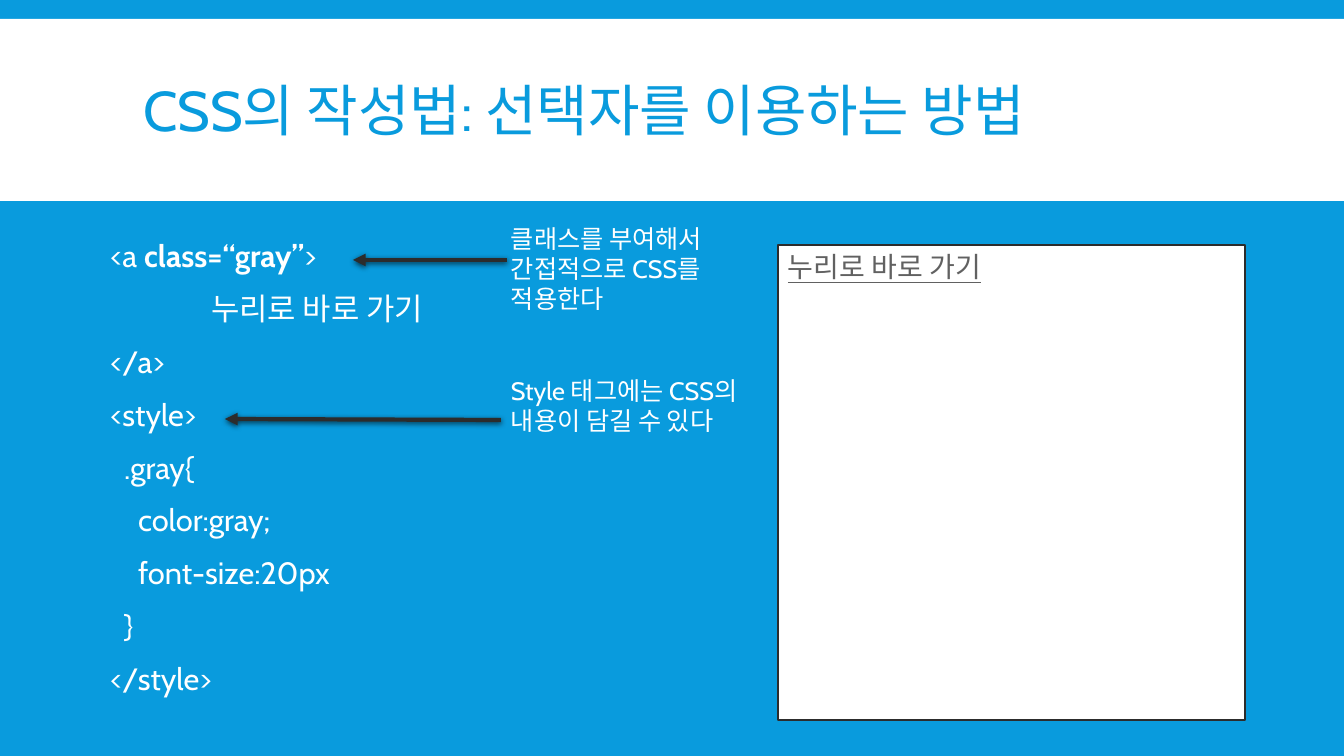
from dataclasses import dataclass

from pptx import Presentation
from pptx.dml.color import RGBColor
from pptx.enum.shapes import MSO_CONNECTOR, MSO_SHAPE
from pptx.enum.text import MSO_ANCHOR, MSO_AUTO_SIZE, PP_ALIGN
from pptx.oxml import parse_xml
from pptx.oxml.ns import nsdecls
from pptx.util import Pt

PX = 914400 / 100.8


@dataclass(frozen=True)
class Theme:
    font: str = "Cabin"
    blue: str = "099BDD"
    white: str = "FFFFFF"
    dark: str = "2C2C2C"
    gray: str = "616161"
    title: int = 40
    code: int = 22
    result: int = 20
    note: int = 18


THEME = Theme()

# Each code line: indent in px, then (text, bold) runs
CODE = [
    (0, [("<a ", False), ("class=“gray”", True), (">", False)]),
    (101, [("누리로 바로 가기", False)]),
    (0, [("</a>", False)]),
    (0, [("<style>", False)]),
    (14, [(".gray{", False)]),
    (28, [("color:gray;", False)]),
    (28, [("font-size:20px", False)]),
    (14, [("}", False)]),
    (0, [("</style>", False)]),
]

# Each note: text, top, arrow start and arrow end
NOTES = [
    ("클래스를 부여해서 간접적으로 CSS를 적용한다", 218, (507, 260), (353, 260)),
    ("Style 태그에는 CSS의 내용이 담길 수 있다", 370, (501, 420), (225, 419)),
]


def px(*values):
    return [round(v * PX) for v in values]


def rgb(color):
    return RGBColor.from_string(color)


def place(sp, *box):
    sp.left, sp.top, sp.width, sp.height = px(*box)


def format_run(r, size, color, bold=False, underline=False):
    r.font.name = THEME.font
    r.font.size = Pt(size)
    r.font.color.rgb = rgb(color)
    r.font.bold = bold
    r.font.underline = underline


def add_box(slide, box, line=None):
    sp = slide.shapes.add_shape(MSO_SHAPE.RECTANGLE, *px(*box))
    sp.shadow.inherit = False
    sp.fill.solid()
    sp.fill.fore_color.rgb = rgb(THEME.white)
    if line:
        sp.line.color.rgb = rgb(line)
        sp.line.width = Pt(1)
    else:
        sp.line.fill.background()
    return sp


def add_title(slide, text):
    sp = slide.shapes.title
    place(sp, 133, 31, 1079, 166)
    tf = sp.text_frame
    tf.text = text
    tf.vertical_anchor = MSO_ANCHOR.MIDDLE
    tf.auto_size = MSO_AUTO_SIZE.NONE
    p = tf.paragraphs[0]
    p.alignment = PP_ALIGN.LEFT
    p.line_spacing = 0.85
    format_run(p.runs[0], THEME.title, THEME.blue)


def add_code(slide, lines):
    sp = slide.placeholders[1]
    place(sp, 100, 236, 374, 505)
    tf = sp.text_frame
    tf.auto_size = MSO_AUTO_SIZE.NONE
    for i, (indent, runs) in enumerate(lines):
        p = tf.add_paragraph() if i else tf.paragraphs[0]
        p.line_spacing = 0.9
        p.space_before, p.space_after = Pt(12), Pt(2)
        pPr = p._p.get_or_add_pPr()
        pPr.set("marL", str(px(indent)[0]))
        pPr.set("indent", "0")
        pPr.append(parse_xml(f"<a:buNone {nsdecls('a')}/>"))
        for text, bold in runs:
            r = p.add_run()
            r.text = text
            format_run(r, THEME.code, THEME.white, bold)


def add_arrow(slide, start, end):
    line = slide.shapes.add_connector(MSO_CONNECTOR.STRAIGHT, *px(*start, *end))
    line.line.color.rgb = rgb(THEME.dark)
    line.line.width = Pt(3)
    # Arrowhead and soft shadow
    spPr = line._element.spPr
    spPr.get_or_add_ln().append(
        parse_xml(f'<a:tailEnd {nsdecls("a")} type="triangle"/>'))
    spPr.append(parse_xml(
        f'<a:effectLst {nsdecls("a")}>'
        f'<a:outerShdw blurRad="{Pt(4)}" dist="{Pt(1.2)}" dir="5400000" rotWithShape="0">'
        '<a:srgbClr val="000000"><a:alpha val="68000"/></a:srgbClr>'
        '</a:outerShdw></a:effectLst>'))


def add_note(slide, text, top):
    sp = slide.shapes.add_textbox(*px(501, top, 250, 102))
    tf = sp.text_frame
    tf.word_wrap = True
    tf.auto_size = MSO_AUTO_SIZE.SHAPE_TO_FIT_TEXT
    tf.text = text
    format_run(tf.paragraphs[0].runs[0], THEME.note, THEME.white)


def add_result(slide, text):
    sp = add_box(slide, (778, 245, 467, 475), THEME.dark)
    tf = sp.text_frame
    tf.text = text
    tf.vertical_anchor = MSO_ANCHOR.TOP
    p = tf.paragraphs[0]
    p.alignment = PP_ALIGN.LEFT
    format_run(p.runs[0], THEME.result, THEME.gray, underline=True)


def main():
    prs = Presentation()
    prs.slide_width, prs.slide_height = px(1344, 756)
    slide = prs.slides.add_slide(prs.slide_layouts[1])
    slide.background.fill.solid()
    slide.background.fill.fore_color.rgb = rgb(THEME.blue)

    # White title band behind the placeholders
    band = add_box(slide, (0, 19, 1344, 182))
    slide.shapes._spTree.insert(2, band._element)

    # Title and code
    add_title(slide, "CSS의 작성법: 선택자를 이용하는 방법")
    add_code(slide, CODE)

    # Notes with arrows to the code
    for text, top, start, end in NOTES:
        add_arrow(slide, start, end)
        add_note(slide, text, top)

    # Rendered result
    add_result(slide, "누리로 바로 가기")
    prs.save("out.pptx")


if __name__ == "__main__":
    main()
